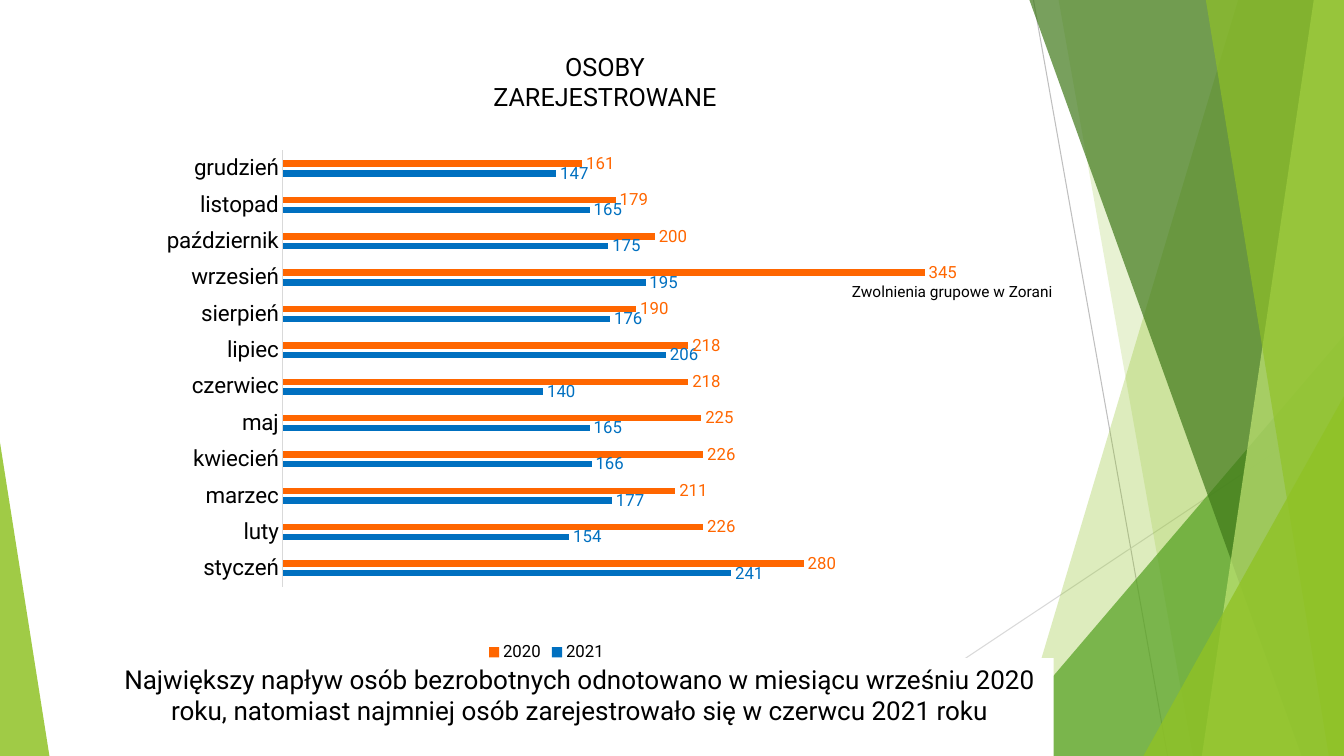
"""Build a slide with a bar chart of registered unemployed persons by month."""
from dataclasses import dataclass

from lxml import etree
from pptx import Presentation
from pptx.chart.data import CategoryChartData
from pptx.dml.color import RGBColor
from pptx.enum.chart import XL_CHART_TYPE, XL_LABEL_POSITION, XL_LEGEND_POSITION, XL_TICK_MARK
from pptx.enum.shapes import MSO_CONNECTOR, MSO_SHAPE
from pptx.enum.text import MSO_ANCHOR, MSO_AUTO_SIZE, PP_ALIGN
from pptx.oxml.ns import qn
from pptx.util import Inches, Pt

BAR_CLUSTERED = XL_CHART_TYPE.BAR_CLUSTERED
OUTSIDE_END = XL_LABEL_POSITION.OUTSIDE_END
LEGEND_BOTTOM = XL_LEGEND_POSITION.BOTTOM
NO_TICK = XL_TICK_MARK.NONE
STRAIGHT = MSO_CONNECTOR.STRAIGHT
TRIANGLE, RECTANGLE = MSO_SHAPE.ISOSCELES_TRIANGLE, MSO_SHAPE.RECTANGLE
TOP, CENTER, NO_AUTOFIT = MSO_ANCHOR.TOP, PP_ALIGN.CENTER, MSO_AUTO_SIZE.NONE

WIDTH, HEIGHT = 13.33, 7.5
FONT = "Roboto"
COLORS = {
    "text": "000000", "paper": "FFFFFF", "axis": "D9D9D9", "ray": "BFBFBF",
    "lime": "90C226", "grass": "54A021", "forest": "3F7819", "pale": "C0E474",
    "2021": "0070C0", "2020": "FF6600",
}
MONTHS = ["styczeń", "luty", "marzec", "kwiecień", "maj", "czerwiec", "lipiec",
          "sierpień", "wrzesień", "październik", "listopad", "grudzień"]
REGISTERED = {
    "2021": [241, 154, 177, 166, 165, 140, 206, 176, 195, 175, 165, 147],
    "2020": [280, 226, 211, 226, 225, 218, 218, 190, 345, 200, 179, 161],
}
PLOT_AREA = {"x": 0.247, "y": 0.061, "w": 0.714, "h": 0.794}


@dataclass
class Ray:
    """Thin decorative line."""
    start: tuple[float, float]
    end: tuple[float, float]
    color: str


@dataclass
class Band:
    """Translucent band that fills the slide from a slanted left edge to the right side."""
    top_x: float
    bottom_x: float
    color: str
    opacity: int


@dataclass
class Wedge:
    """Translucent right triangle standing on the bottom edge."""
    left: float
    top: float
    width: float
    apex: int
    color: str
    opacity: int


RAYS = [Ray((10.25, 0), (11.58, HEIGHT), "ray"), Ray((WIDTH, 4.03), (8.12, HEIGHT), "axis")]
FACETS = [
    Band(12.28, 10.04, "lime", 30),
    Band(10.5, 11.83, "lime", 20),
    Wedge(9.77, 3.33, 3.56, 1, "grass", 72),
    Band(10.21, 12.91, "forest", 70),
    Band(13.03, 11.92, "pale", 70),
    Band(11.96, 13.18, "lime", 65),
    Wedge(11.34, 3.93, 1.99, 1, "lime", 80),
    Wedge(0, 4.39, 0.49, 0, "lime", 85),
]


def rgb(name: str) -> RGBColor:
    """Return a named colour."""
    return RGBColor.from_string(COLORS[name])


def style_font(font, size: float, color: str = "text") -> None:
    """Apply the slide font with a size and colour."""
    font.name, font.size, font.bold = FONT, Pt(size), False
    font.color.rgb = rgb(color)


def write(shape, text: str, *, size: float, wrap: bool = True) -> None:
    """Put centred text at the top of a shape."""
    frame = shape.text_frame
    frame.auto_size = NO_AUTOFIT
    frame.word_wrap, frame.vertical_anchor = wrap, TOP
    frame.text = text
    frame.paragraphs[0].alignment = CENTER
    style_font(frame.paragraphs[0].runs[0].font, size)


def paint(shape, color: str, opacity: int = 100) -> None:
    """Fill a shape without outline or shadow."""
    shape.shadow.inherit = False
    shape.line.fill.background()
    shape.fill.solid()
    shape.fill.fore_color.rgb = rgb(color)
    if opacity < 100:
        tint = shape._element.spPr.find(qn("a:solidFill"))[0]
        etree.SubElement(tint, qn("a:alpha"), val=str(opacity * 1000))


def draw_ray(shapes, ray: Ray) -> None:
    """Draw one thin line."""
    line = shapes.add_connector(STRAIGHT, *map(Inches, ray.start + ray.end))
    line.line.color.rgb = rgb(ray.color)
    line.line.width = Pt(0.75)
    etree.SubElement(line._element.spPr, qn("a:effectLst"))


def draw_facet(shapes, facet: Band | Wedge) -> None:
    """Draw one translucent band or wedge."""
    if isinstance(facet, Band):
        corners = [(WIDTH, 0), (WIDTH, HEIGHT), (facet.bottom_x, HEIGHT)]
        outline = shapes.build_freeform(Inches(facet.top_x), 0)
        outline.add_line_segments([(Inches(x), Inches(y)) for x, y in corners])
        piece = outline.convert_to_shape()
    else:
        piece = shapes.add_shape(TRIANGLE, Inches(facet.left), Inches(facet.top),
                                 Inches(facet.width), Inches(HEIGHT - facet.top))
        piece.adjustments[0] = facet.apex
    paint(piece, facet.color, facet.opacity)


def place_plot_area(chart) -> None:
    """Fix the inner plot area as fractions of the chart."""
    plot_area = chart._chartSpace.chart.plotArea
    for automatic in plot_area.findall(qn("c:layout")):
        plot_area.remove(automatic)
    layout = etree.Element(qn("c:layout"))
    manual = etree.SubElement(layout, qn("c:manualLayout"))
    settings = {"layoutTarget": "inner", "xMode": "edge", "yMode": "edge", **PLOT_AREA}
    for tag, value in settings.items():
        etree.SubElement(manual, qn(f"c:{tag}"), val=str(value))
    plot_area.insert(0, layout)


def draw_registrations(shapes) -> None:
    """Draw the monthly bar chart for both years."""
    data = CategoryChartData()
    data.categories = MONTHS
    for year, counts in REGISTERED.items():
        data.add_series(year, counts)
    chart = shapes.add_chart(BAR_CLUSTERED, Inches(0.25), Inches(1.16),
                             Inches(10.34), Inches(5.45), data).chart
    style_font(chart.font, 10)
    chart.has_title = False
    chart.has_legend = True
    chart.legend.position = LEGEND_BOTTOM
    chart.legend.include_in_layout = False
    style_font(chart.legend.font, 12)

    months = chart.category_axis
    months.major_tick_mark = months.minor_tick_mark = NO_TICK
    months.has_major_gridlines = False
    months.format.line.color.rgb = rgb("axis")
    months.format.line.width = Pt(0.75)
    style_font(months.tick_labels.font, 16)
    counts_axis = chart.value_axis
    counts_axis.minimum_scale, counts_axis.maximum_scale = 0, 400
    counts_axis.has_major_gridlines = False
    counts_axis.visible = False

    bars = chart.plots[0]
    bars.gap_width, bars.overlap, bars.vary_by_categories = 312, -51, False
    for year in bars.series:
        year.format.fill.solid()
        year.format.fill.fore_color.rgb = rgb(year.name)
        labels = year.data_labels
        labels.show_value, labels.position = True, OUTSIDE_END
        style_font(labels.font, 12, year.name)
    place_plot_area(chart)


def main() -> None:
    """Assemble and save the slide."""
    deck = Presentation()
    deck.slide_width, deck.slide_height = Inches(WIDTH), Inches(HEIGHT)
    slide = deck.slides.add_slide(deck.slide_layouts[5])
    shapes = slide.shapes
    for ray in RAYS:
        draw_ray(shapes, ray)
    for facet in FACETS:
        draw_facet(shapes, facet)
    draw_registrations(shapes)

    heading = shapes.title
    heading.left, heading.top = Inches(4.43), Inches(0.46)
    heading.width, heading.height = Inches(3.14), Inches(0.7)
    write(heading, "OSOBY ZAREJESTROWANE", size=18)

    layoffs = shapes.add_textbox(Inches(7.69), Inches(2.75), Inches(3.51), Inches(0.4))
    write(layoffs, "Zwolnienia grupowe w Zorani", size=11, wrap=False)

    conclusion = shapes.add_shape(RECTANGLE, Inches(1.05), Inches(6.53),
                                  Inches(9.4), Inches(HEIGHT - 6.53))
    paint(conclusion, "paper")
    write(conclusion, "Największy napływ osób bezrobotnych odnotowano w miesiącu wrześniu 2020 "
          "roku, natomiast najmniej osób zarejestrowało się w czerwcu 2021 roku", size=18.6)
    deck.save("out.pptx")


if __name__ == "__main__":
    main()
